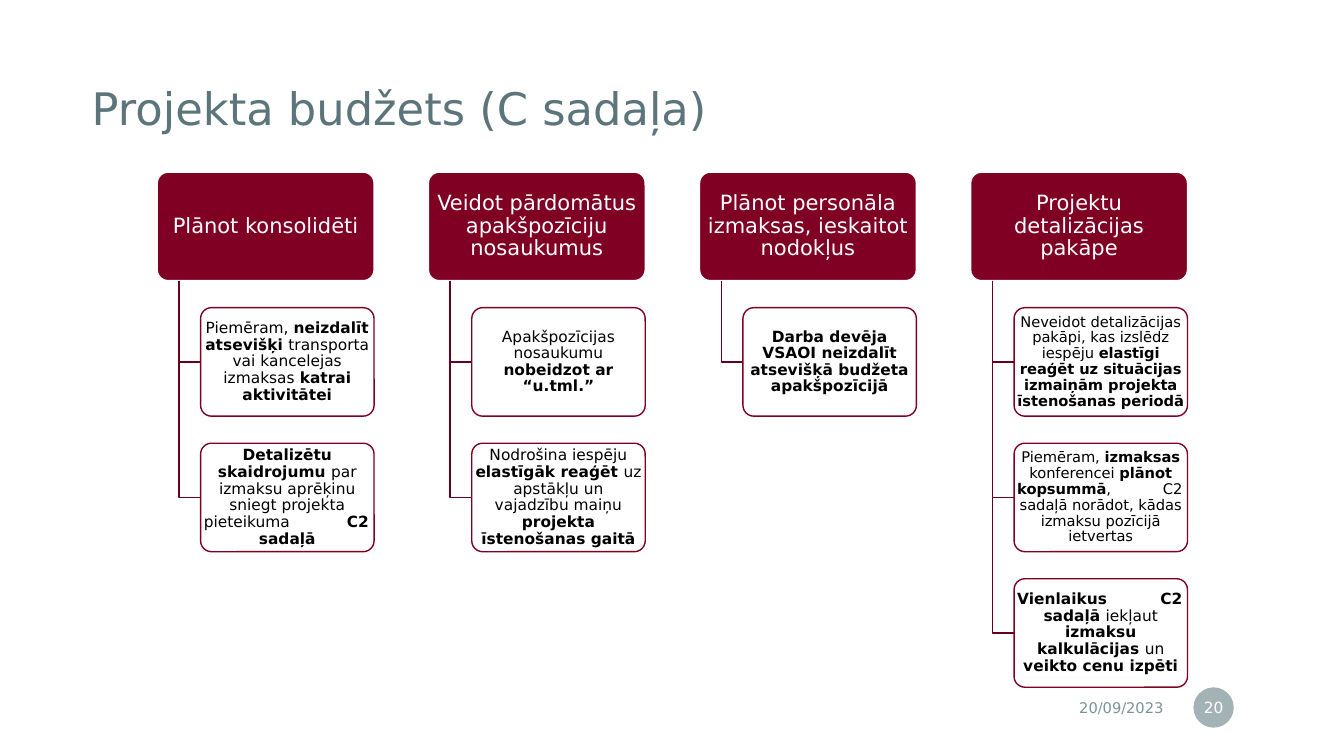
from lxml import etree
from pptx import Presentation
from pptx.dml.color import RGBColor
from pptx.enum.shapes import MSO_SHAPE
from pptx.enum.text import MSO_ANCHOR, PP_ALIGN
from pptx.oxml.ns import qn
from pptx.util import Pt

FONT = "DejaVu Sans"
WHITE = RGBColor(0xFF, 0xFF, 0xFF)
BLACK = RGBColor(0, 0, 0)
TEAL = RGBColor(0x5B, 0x75, 0x7A)
GREY = RGBColor(0x7C, 0x93, 0x96)
WINE = RGBColor(0x80, 0x00, 0x24)
DARK_WINE = RGBColor(0x67, 0x00, 0x1D)

LEFT, TOP, COL_STEP, ROW_STEP = 112.3, 123, 193.68, 96.8
HEAD_W, BOX_W, BOX_H = 154.9, 123.9, 77.5
TRUNK, INDENT = 15.5, 31

COLUMNS = [
    ("Plānot konsolidēti", [
        (11, ["Piemēram, *neizdalīt atsevišķi *transporta vai kancelejas izmaksas *katrai aktivitātei"]),
        (11, ["*Detalizētu skaidrojumu *par izmaksu aprēķinu sniegt projekta",
              "pieteikuma\t*C2", "*sadaļā"]),
    ]),
    ("Veidot pārdomātus apakšpozīciju nosaukumus", [
        (11, ["Apakšpozīcijas nosaukumu *nobeidzot ar “u.tml.”"]),
        (11, ["Nodrošina iespēju *elastīgāk reaģēt *uz apstākļu un vajadzību maiņu "
              "*projekta īstenošanas gaitā"]),
    ]),
    ("Plānot personāla izmaksas, ieskaitot nodokļus", [
        (11, ["*Darba devēja VSAOI neizdalīt atsevišķā budžeta apakšpozīcijā"]),
    ]),
    ("Projektu detalizācijas pakāpe", [
        (10.5, ["Neveidot detalizācijas pakāpi, kas izslēdz iespēju *elastīgi reaģēt uz "
                "situācijas izmaiņām projekta īstenošanas periodā"]),
        (10.5, ["Piemēram, *izmaksas* konferencei *plānot", "*kopsummā*,\tC2",
                "sadaļā norādot, kādas izmaksu pozīcijā ietvertas"]),
        (11, ["*Vienlaikus\tC2", "*sadaļā *iekļaut *izmaksu kalkulācijas *un *veikto cenu izpēti"]),
    ]),
]


def write(sp, paragraphs, size, color, align=PP_ALIGN.CENTER, insets=(0, 0), spacing=0.9):
    tf = sp.text_frame
    tf.word_wrap = True
    tf.vertical_anchor = MSO_ANCHOR.MIDDLE
    tf.margin_left = tf.margin_right = Pt(insets[0])
    tf.margin_top = tf.margin_bottom = Pt(insets[1])
    for i, line in enumerate(paragraphs):
        p = tf.add_paragraph() if i else tf.paragraphs[0]
        p.alignment = align
        p.line_spacing = spacing
        if "\t" in line:
            p.alignment = PP_ALIGN.LEFT
            tabs = etree.SubElement(p._p.get_or_add_pPr(), qn("a:tabLst"))
            etree.SubElement(tabs, qn("a:tab"), pos=str(Pt(118)), algn="r")
        p.font.name, p.font.size = FONT, Pt(size)
        p.font.color.rgb = color
        for j, part in enumerate(line.split("*")):
            if part:
                r = p.add_run()
                r.text = part
                if j % 2:
                    r.font.bold = True


def add_box(kind, x, y, w, h, fill, opacity=100):
    sp = slide.shapes.add_shape(kind, Pt(x), Pt(y), Pt(w), Pt(h))
    sp.shadow.inherit = False
    sp.fill.solid()
    sp.fill.fore_color.rgb = fill
    if opacity < 100:
        clr = sp._element.spPr.find(qn("a:solidFill"))[0]
        etree.SubElement(clr, qn("a:alpha"), val=str(opacity * 1000))
    if kind == MSO_SHAPE.ROUNDED_RECTANGLE:
        sp.adjustments[0] = 0.1
        sp.line.width = Pt(1)
    return sp


prs = Presentation()
prs.slide_width, prs.slide_height = Pt(960), Pt(540)
slide = prs.slides.add_slide(prs.slide_layouts[5])

title = slide.shapes.title
title.left, title.top, title.width, title.height = Pt(65.5), Pt(34.6), Pt(628.6), Pt(88.6)
write(title, ["Projekta budžets (C sadaļa)"], 32, TEAL, PP_ALIGN.LEFT, (0, 14.4))

date = slide.shapes.add_textbox(Pt(621.4), Pt(492.5), Pt(216.7), Pt(25.2))
write(date, ["20/09/2023"], 10.5, GREY, PP_ALIGN.RIGHT, (7.2, 3.6), 1)

badge = add_box(MSO_SHAPE.OVAL, 852.5, 491, 28.8, 28.8, GREY, 70)
badge.line.fill.background()
write(badge, ["20"], 11, WHITE, insets=(1.4, 3.6), spacing=1)

for col, (heading, details) in enumerate(COLUMNS):
    x = LEFT + col * COL_STEP
    head = add_box(MSO_SHAPE.ROUNDED_RECTANGLE, x, TOP, HEAD_W, BOX_H, WINE)
    head.line.color.rgb = WHITE
    write(head, [heading], 15, WHITE, insets=(2.2, 1.4))
    for row, (size, lines) in enumerate(details, 1):
        y = TOP + row * ROW_STEP
        middle = y + BOX_H / 2
        fb = slide.shapes.build_freeform(Pt(x + TRUNK), Pt(TOP + BOX_H))
        fb.add_line_segments([(Pt(x + TRUNK), Pt(middle)), (Pt(x + INDENT), Pt(middle))], close=False)
        branch = fb.convert_to_shape()
        branch.shadow.inherit = False
        branch.fill.background()
        branch.line.color.rgb = DARK_WINE
        branch.line.width = Pt(1)
        detail = add_box(MSO_SHAPE.ROUNDED_RECTANGLE, x + INDENT, y, BOX_W, BOX_H, WHITE, 90)
        detail.line.color.rgb = WINE
        write(detail, lines, size, BLACK)

prs.save("out.pptx")
